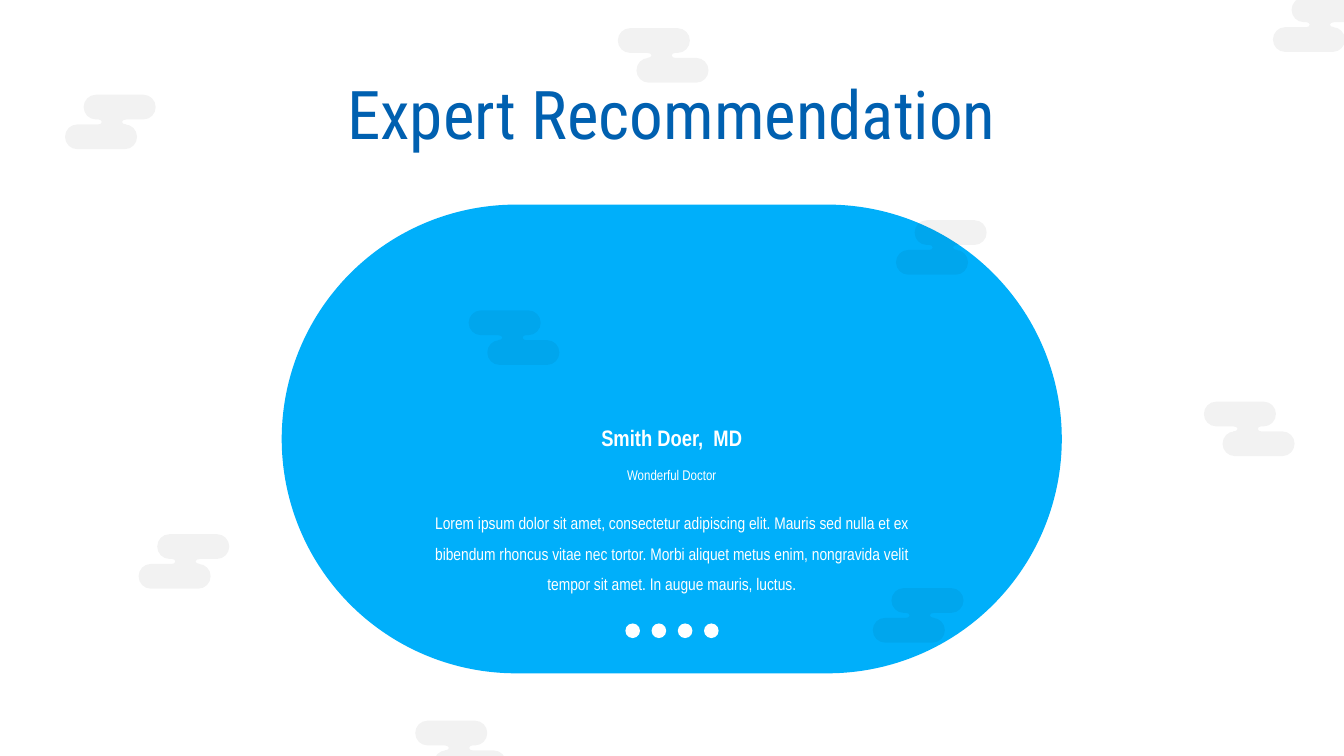
import math
from dataclasses import dataclass

import lxml.etree
import pptx
import pptx.dml.color
import pptx.enum.shapes
import pptx.enum.text
import pptx.oxml.ns
import pptx.util

Inches = pptx.util.Inches
ShapeType = pptx.enum.shapes.MSO_SHAPE
qualified = pptx.oxml.ns.qn


@dataclass(frozen=True)
class Theme:
    blue: str = "00AFFA"
    dark_blue: str = "0060B0"
    white: str = "FFFFFF"
    cloud: str = "000000"
    cloud_alpha: int = 5000
    title_font: str = "Roboto Condensed"
    body_font: str = "Arial Narrow"
    title_size: int = 96
    name_size: int = 32
    role_size: int = 20
    quote_size: int = 24


theme = Theme()
presentation = pptx.Presentation()
presentation.slide_width = Inches(26.67)
presentation.slide_height = Inches(15)
slide = presentation.slides.add_slide(presentation.slide_layouts[6])


def paint(shape, color):
    shape.shadow.inherit = False
    shape.fill.solid()
    shape.fill.fore_color.rgb = pptx.dml.color.RGBColor.from_string(color)
    shape.line.fill.background()


def add_text(box, text, font, size, color, bold=False, spacing=None):
    text_box = slide.shapes.add_textbox(*map(Inches, box))
    frame = text_box.text_frame
    frame.word_wrap = True
    frame.margin_left = frame.margin_right = Inches(0.1)
    frame.margin_top = frame.margin_bottom = Inches(0.1)
    paragraph = frame.paragraphs[0]
    paragraph.alignment = pptx.enum.text.PP_ALIGN.CENTER
    if spacing:
        paragraph.line_spacing = spacing
    run = paragraph.add_run()
    run.text = text
    run.font.name = font
    run.font.size = pptx.util.Pt(size)
    run.font.bold = bold
    run.font.color.rgb = pptx.dml.color.RGBColor.from_string(color)
    return frame


# Rounded panel
panel = slide.shapes.add_shape(
    ShapeType.ROUNDED_RECTANGLE, Inches(5.59), Inches(4.06), Inches(15.48), Inches(9.3))
panel.adjustments[0] = 0.5
paint(panel, theme.blue)

# Expert name, role and quote
quote = ("Lorem ipsum dolor sit amet, consectetur adipiscing elit. Mauris sed nulla et ex "
         "bibendum rhoncus vitae nec tortor. Morbi aliquet metus enim, nongravida velit "
         "tempor sit amet. In augue mauris, luctus.")
for box, text, size, bold, spacing in [
    ((11.34, 8.32, 3.98, 0.73), "Smith Doer,  MD", theme.name_size, True, None),
    ((12.03, 9.16, 2.6, 0.53), "Wonderful Doctor", theme.role_size, False, None),
    ((8.08, 9.88, 10.5, 1.81), quote, theme.quote_size, False, 1.5),
]:
    frame = add_text(box, text, theme.body_font, size, theme.white, bold, spacing)
    frame.auto_size = pptx.enum.text.MSO_AUTO_SIZE.SHAPE_TO_FIT_TEXT

# Pager dots
for index in range(4):
    dot = slide.shapes.add_shape(
        ShapeType.OVAL, Inches(12.41 + 0.52 * index), Inches(12.37), Inches(0.29), Inches(0.29))
    paint(dot, theme.white)

# Title
title_frame = add_text((1.83, 0.89, 23, 2.9), "Expert Recommendation", theme.title_font,
                       theme.title_size, theme.dark_blue, spacing=0.9)
title_frame.vertical_anchor = pptx.enum.text.MSO_ANCHOR.MIDDLE

# Cloud outline: two pills joined by a neck, as half ellipses of
# (center x, center y, radius x, radius y, start angle, quarter turn)
cloud_width = 1.8
cloud_arcs = [
    (1.19, 0.245, 0.24, 0.245, -90, 90),
    (1.14, 0.54, 0.07, 0.05, -90, -90),
    (1.56, 0.835, 0.24, 0.245, -90, 90),
    (0.61, 0.835, 0.24, 0.245, 90, 90),
    (0.58, 0.54, 0.09, 0.05, 90, -90),
    (0.24, 0.245, 0.24, 0.245, 90, 90),
]
# Each half ellipse gives its start and two Bezier curves of three points
cloud_points = []
for center_x, center_y, radius_x, radius_y, start, turn in cloud_arcs:
    handle = math.copysign(0.55, turn)
    for quarter in range(3):
        angle = math.radians(start + turn * quarter)
        cosine, sine = math.cos(angle), math.sin(angle)
        for offset in (-handle, 0, handle):
            if (quarter == 0 and offset == -handle) or (quarter == 2 and offset == handle):
                continue
            cloud_points.append((center_x + radius_x * (cosine - offset * sine),
                                 center_y + radius_y * (sine + offset * cosine)))

# All clouds in one outline: left, top, whether the lower pill leans left
clouds = [
    (8.24, 14.3, False), (17.32, 11.67, True), (2.75, 10.6, True),
    (23.89, 7.97, False), (9.3, 6.16, False), (17.78, 4.37, True),
    (1.29, 1.88, True), (12.26, 0.56, False), (25.26, -0.05, True),
]
builder = None
for left, top, leans_left in clouds:
    outline = [(Inches(left + (cloud_width - x if leans_left else x)), Inches(top + y))
               for x, y in cloud_points]
    if builder is None:
        builder = slide.shapes.build_freeform(*outline[0])
    else:
        builder.move_to(*outline[0])
    builder.add_line_segments(outline[1:], close=True)
cloud_shape = builder.convert_to_shape()
paint(cloud_shape, theme.cloud)

# Join the arc points into curves; every seventh segment stays straight
segments = list(cloud_shape.element.iter(qualified("a:lnTo")))
segments_per_cloud = len(cloud_points) - 1
for index, segment in enumerate(segments):
    position = index % segments_per_cloud % 7
    if position == 6:
        continue
    if position % 3 == 0:
        curve = lxml.etree.Element(qualified("a:cubicBezTo"))
        segment.addprevious(curve)
    curve.append(segment[0])
    segment.getparent().remove(segment)

# Cloud transparency
fill_color = next(cloud_shape.element.spPr.iter(qualified("a:srgbClr")))
lxml.etree.SubElement(fill_color, qualified("a:alpha"), val=str(theme.cloud_alpha))

presentation.save("out.pptx")
